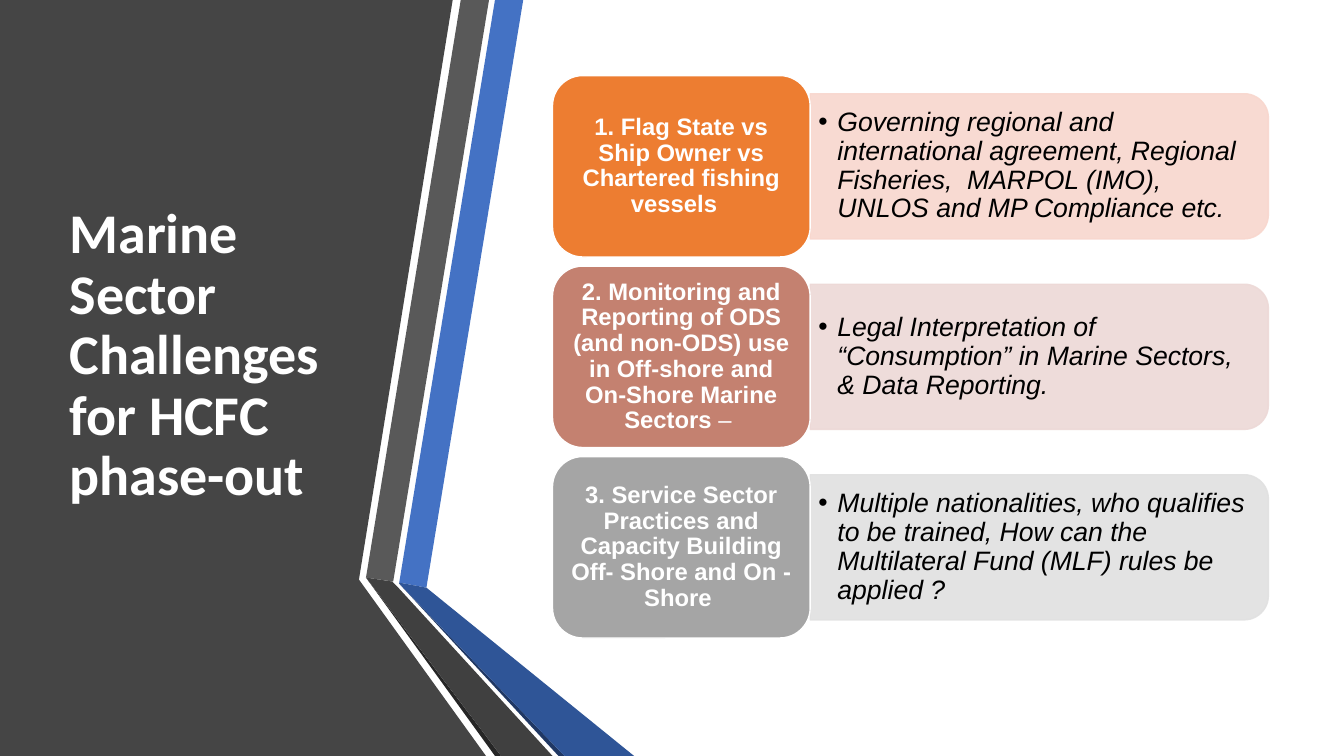
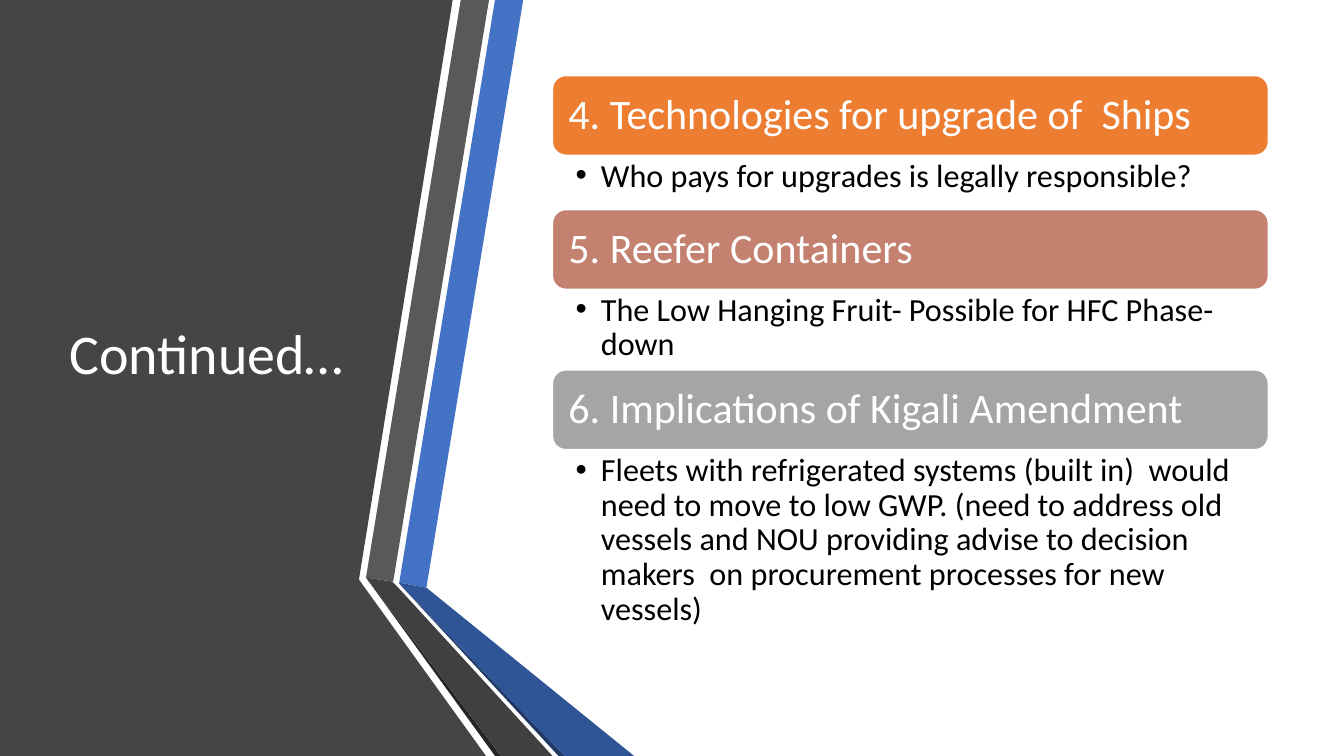
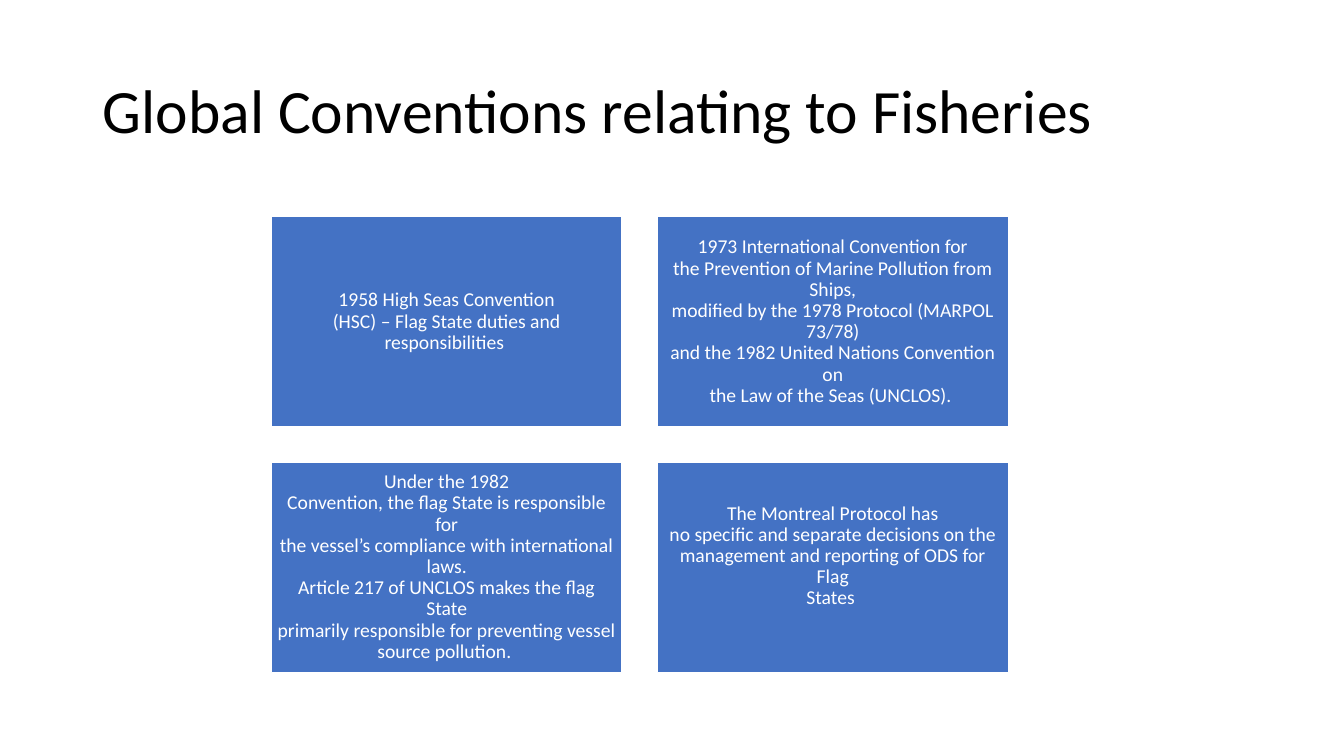
from dataclasses import dataclass

from lxml import etree
from pptx import Presentation
from pptx import util as u
from pptx.dml.color import RGBColor
from pptx.enum import shapes, text
from pptx.oxml.ns import qn

KIND = shapes.MSO_SHAPE
MID, TOP = text.MSO_ANCHOR.MIDDLE, text.MSO_ANCHOR.TOP
LEFT, MIDST = text.PP_ALIGN.LEFT, text.PP_ALIGN.CENTER


@dataclass(frozen=True)
class Theme:
    white: str = "FFFFFF"
    black: str = "000000"
    blue: str = "4472C4"
    heads: tuple = ("ED7D31", "C48170", "A5A5A5")
    tints: tuple = ("F8D7CE", "EDD9D7", "E1E1E1")
    sans: str = "Calibri"
    alt: str = "Arial"
    title: int = 44
    side: int = 40
    bar: int = 30
    note: int = 23
    fact: int = 19
    label: int = 17
    cell: int = 14


T = Theme()


@dataclass(frozen=True)
class Box:
    """A region in inches."""
    x: float
    y: float
    w: float
    h: float

    def inner(self, x, y, w, h):
        """A region given as shares of this one."""
        return Box(self.x + x * self.w, self.y + y * self.h,
                   w * self.w, h * self.h)

    def grid(self, cols, rows, gap):
        """Equal cells, row by row, with equal gaps."""
        w = (self.w - gap * (cols - 1)) / cols
        h = (self.h - gap * (rows - 1)) / rows
        return [Box(self.x + c * (w + gap), self.y + r * (h + gap), w, h)
                for r in range(rows) for c in range(cols)]

    def stack(self, sizes):
        """Rows whose heights follow the given weights."""
        unit, y, rows = self.h / sum(sizes), self.y, []
        for size in sizes:
            rows.append(Box(self.x, y, self.w, size * unit))
            y += size * unit
        return rows

    def turn(self):
        """The same centre with width and height swapped."""
        return Box(self.x + (self.w - self.h) / 2,
                   self.y + (self.h - self.w) / 2, self.h, self.w)

    def emu(self):
        return [u.Inches(v) for v in (self.x, self.y, self.w, self.h)]


PAGE = Box(0, 0, 13.33, 7.5)
SIDE = Box(0.59, 0.75, 3.04, 5.58)
MAIN = Box(5.48, 0.75, 7.1, 5.58)
HEAD = Box(0.92, 0.4, 11.5, 1.45)
CELLS = Box(2.69, 2.15, 7.31, 4.52)

# Outlines of the side band, in hundredths of an inch
BAND = [
    ("454545", [(0, 0), (449, 0), (356, 575), (482, 750), (0, 750)]),
    (T.blue, [(396, 578), (423, 583), (519, 0), (491, 0)]),
    ("595959", [(485, 0), (457, 0), (363, 573), (390, 577)]),
    ("262626", [(363, 573), (491, 750), (497, 750)]),
    ("203864", [(396, 579), (554, 750), (560, 750)]),
    ("2F5597", [(396, 579), (560, 750), (629, 750), (423, 583), (396, 578)]),
    ("404040", [(548, 750), (395, 583), (389, 577), (363, 573), (497, 750)]),
]

RULES = [
    ([("1. Flag State vs Ship Owner vs Chartered fishing vessels\t", True)],
     "Governing regional and international agreement, Regional Fisheries,  "
     "MARPOL (IMO), UNLOS and MP Compliance etc."),
    ([("2. Monitoring and Reporting of ODS (and non-ODS) use in Off-shore "
       "and On-Shore Marine Sectors ", True), ("– ", False)],
     "Legal Interpretation of “Consumption” in Marine Sectors, "
     "& Data Reporting."),
    ([("3. Service Sector Practices and Capacity Building Off- Shore and "
       "On - Shore ", True)],
     "Multiple nationalities, who qualifies to be trained, How can the "
     "Multilateral Fund (MLF) rules be applied ?"),
]

# Heading, note, and the note's height beside a bar of height 79
BAR = 79
TOPICS = [
    ("4. Technologies for upgrade of  Ships",
     "Who pays for upgrades is legally responsible?", 54),
    ("5. Reefer Containers",
     "The Low Hanging Fruit- Possible for HFC Phase-down", 80),
    ("6. Implications of Kigali Amendment",
     "Fleets with refrigerated systems (built in)  would need to move to low "
     "GWP. (need to address old vessels and NOU providing advise to decision "
     "makers  on procurement processes for new vessels)", 187),
]

# Text and bottom inset
PACTS = [
    ("1958 High Seas Convention\n"
     "(HSC) – Flag State duties and responsibilities ", 0.06),
    ("1973 International Convention for\n"
     "the Prevention of Marine Pollution from Ships,\n"
     "modified by the 1978 Protocol (MARPOL 73/78)\n"
     "and the 1982 United Nations Convention on\n"
     "the Law of the Seas (UNCLOS). ", 0.06),
    ("Under the 1982\n"
     "Convention, the flag State is responsible for\n"
     "the vessel’s compliance with international laws.\n"
     "Article 217 of UNCLOS makes the flag State\n"
     "primarily responsible for preventing vessel source pollution. ", 0.06),
    ("The Montreal Protocol has\n"
     "no specific and separate decisions on the\n"
     "management and reporting of ODS for Flag\n"
     "States ", 0.28),
]


def paint(shape, fill, line=None):
    shape.shadow.inherit = False
    shape.fill.solid()
    shape.fill.fore_color.rgb = RGBColor.from_string(fill)
    if line:
        shape.line.color.rgb = RGBColor.from_string(line)
        shape.line.width = u.Pt(1)
    else:
        shape.line.fill.background()


def fade(shape, share):
    """Make fill and line partly see-through."""
    for tone in list(shape.element.spPr.iter(qn("a:srgbClr"))):
        etree.SubElement(tone, qn("a:alpha"), val=str(share * 1000))


def form(slide, kind, box, fill, line):
    shape = slide.shapes.add_shape(kind, *box.emu())
    paint(shape, fill, line)
    return shape


def write(shape, runs, size, color, font=T.sans, italic=False, align=LEFT,
          anchor=MID, inset=(0.1, 0.05, 0.1, 0.05), hang=0):
    """Set one paragraph from (text, bold) runs; hang gives it a bullet."""
    frame = shape.text_frame
    frame.word_wrap = True
    frame.auto_size = text.MSO_AUTO_SIZE.NONE
    frame.vertical_anchor = anchor
    (frame.margin_left, frame.margin_top,
     frame.margin_right, frame.margin_bottom) = map(u.Inches, inset)
    para = frame.paragraphs[0]
    para.alignment = align
    para.line_spacing = 0.9
    para.space_before = para.space_after = u.Pt(0)
    if hang:
        props = para._p.get_or_add_pPr()
        props.set("marL", str(u.Inches(hang)))
        props.set("indent", str(-u.Inches(hang)))
        etree.SubElement(props, qn("a:buFont"), typeface=T.alt)
        etree.SubElement(props, qn("a:buChar"), char="•")
    for words, bold in runs:
        for i, line in enumerate(words.split("\n")):
            if i:
                para.add_line_break()
            run = para.add_run()
            run.text = line
            run.font.name, run.font.size = font, u.Pt(size)
            run.font.bold, run.font.italic = bold, italic
            run.font.color.rgb = RGBColor.from_string(color)


def title(slide, box, words, size, color, bold=False):
    shape = slide.shapes.title
    shape.left, shape.top, shape.width, shape.height = box.emu()
    write(shape, [(words, bold)], size, color)


def band(slide, words, bold):
    """Side band with the title in front of it."""
    for fill, (first, *rest) in BAND:
        draft = slide.shapes.build_freeform(*first, scale=u.Inches(0.01))
        draft.add_line_segments(rest, close=True)
        paint(draft.convert_to_shape(), fill)
    head = slide.shapes.title.element
    head.getparent().append(head)
    title(slide, SIDE, words, T.side, T.white, bold)


def rule(slide, box, label, fact, fill, tint):
    """Label on the left, rounded fact panel on the right."""
    panel = box.inner(0.36, 0.1, 0.64, 0.8)
    back = form(slide, KIND.ROUND_2_SAME_RECTANGLE, panel.turn(), tint, tint)
    back.rotation = 90
    fade(back, 90)
    note = slide.shapes.add_textbox(*panel.inner(0, 0.05, 0.98, 0.9).emu())
    write(note, [(fact, False)], T.fact, T.black, T.alt, italic=True,
          inset=(0.08, 0.04, 0.08, 0.04), hang=0.19)
    front = form(slide, KIND.ROUNDED_RECTANGLE, box.inner(0, 0, 0.36, 1),
                 fill, T.white)
    write(front, label, T.label, T.white, T.alt, align=MIDST,
          inset=(0.07, 0.04, 0.07, 0.04))


def topic(slide, top, low, name, note, fill):
    """Heading bar with a bulleted note under it."""
    bar = form(slide, KIND.ROUNDED_RECTANGLE, top, fill, T.white)
    write(bar, [(name, False)], T.bar, T.white, inset=(0.12,) * 4)
    body = slide.shapes.add_textbox(*low.emu())
    write(body, [(note, False)], T.note, T.black, anchor=TOP,
          inset=(0.23, 0.04, 0.23, 0.04), hang=0.25)


def rules(slide):
    band(slide, "Marine Sector Challenges for HCFC phase-out", True)
    rows = MAIN.grid(1, len(RULES), 0.09)
    for row, (label, fact), fill, tint in zip(rows, RULES, T.heads, T.tints):
        rule(slide, row, label, fact, fill, tint)


def topics(slide):
    band(slide, "Continued…", False)
    rows = MAIN.stack([s for *_, size in TOPICS for s in (BAR, size)])
    for top, low, (name, note, _), fill in zip(rows[::2], rows[1::2],
                                               TOPICS, T.heads):
        topic(slide, top, low, name, note, fill)


def pacts(slide):
    title(slide, HEAD, "Global Conventions relating to Fisheries",
          T.title, T.black)
    for box, (words, low) in zip(CELLS.grid(2, 2, 0.35), PACTS):
        cell = form(slide, KIND.RECTANGLE, box, T.blue, T.white)
        write(cell, [(words, False)], T.cell, T.white, align=MIDST,
              inset=(0.06, 0.06, 0.06, low))


def main():
    deck = Presentation()
    deck.slide_width, deck.slide_height = u.Inches(PAGE.w), u.Inches(PAGE.h)
    for build in (rules, topics, pacts):
        build(deck.slides.add_slide(deck.slide_layouts[5]))
    deck.save("out.pptx")


if __name__ == "__main__":
    main()
